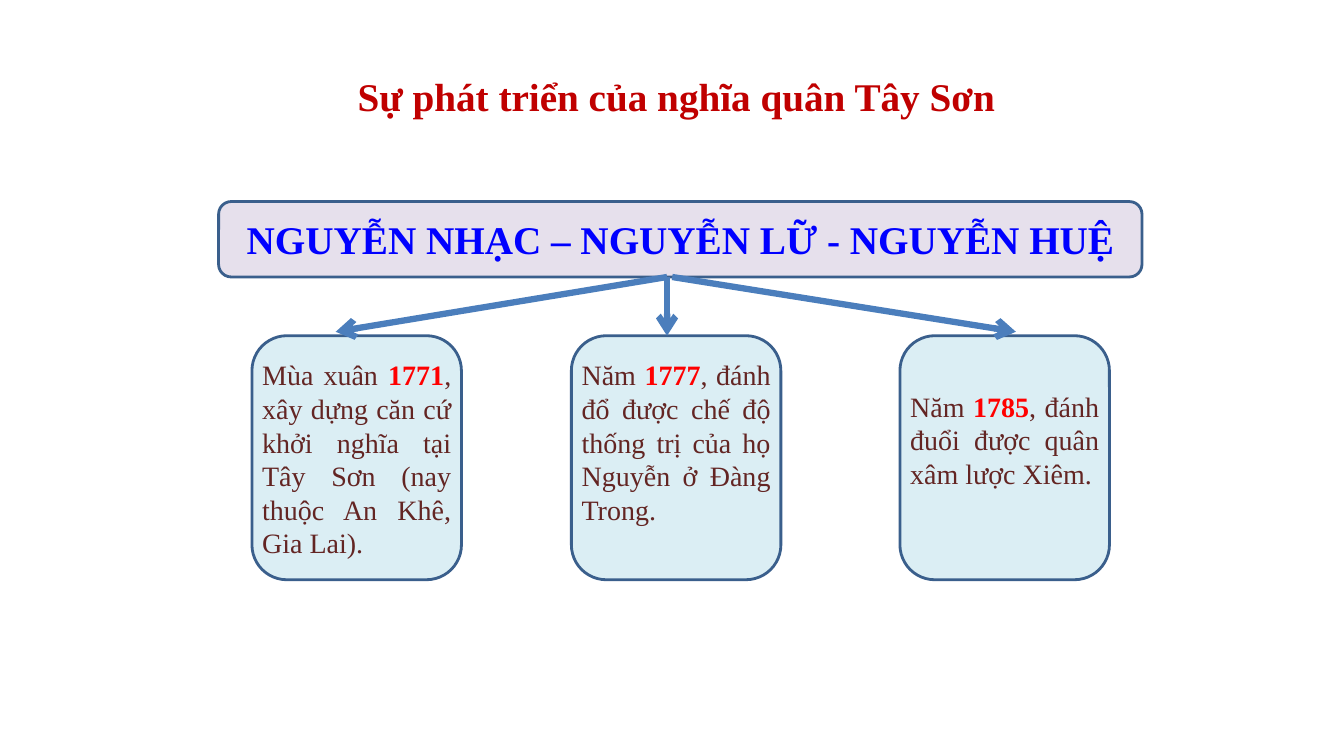
from pptx import Presentation
from pptx.dml.color import RGBColor
from pptx.enum.shapes import MSO_CONNECTOR, MSO_SHAPE
from pptx.enum.text import MSO_ANCHOR, MSO_AUTO_SIZE, PP_ALIGN
from pptx.oxml.ns import qn
from pptx.util import Cm, Pt
from lxml import etree

STRAIGHT = MSO_CONNECTOR.STRAIGHT
ROUNDED = MSO_SHAPE.ROUNDED_RECTANGLE
TOP, MIDDLE = MSO_ANCHOR.TOP, MSO_ANCHOR.MIDDLE
CENTER, JUSTIFY = PP_ALIGN.CENTER, PP_ALIGN.JUSTIFY
NO_AUTOFIT = MSO_AUTO_SIZE.NONE

DARK_RED = RGBColor(0xC0, 0x00, 0x00)
RED = RGBColor(0xFF, 0x00, 0x00)
BROWN = RGBColor(0x63, 0x25, 0x23)
BLUE = RGBColor(0x00, 0x00, 0xFF)
BORDER = RGBColor(0x3A, 0x5F, 0x8C)
ARROW = RGBColor(0x4B, 0x7E, 0xBC)
LILAC = RGBColor(0xE6, 0xE0, 0xEC)
PALE_BLUE = RGBColor(0xDB, 0xEE, 0xF4)


def add_text(p, text, size=20, color=BROWN, bold=False, font="Times New Roman"):
    r = p.add_run()
    r.text = text
    r.font.name = font
    r.font.size = Pt(size)
    r.font.bold = bold
    r.font.color.rgb = color


class Diagram:
    """Adds styled elements to one slide."""

    def __init__(self, slide):
        self.slide = slide

    def title(self, text, left, top, width, height):
        sp = self.slide.shapes.title
        sp.left, sp.top, sp.width, sp.height = Cm(left), Cm(top), Cm(width), Cm(height)
        tf = sp.text_frame
        tf.auto_size = NO_AUTOFIT
        tf.vertical_anchor = MIDDLE
        p = tf.paragraphs[0]
        p.alignment = CENTER
        add_text(p, text, size=28, color=DARK_RED, bold=True)

    def box(self, left, top, width, height, fill, align, anchor=MIDDLE, inset=0):
        """Draw a rounded box and return its empty paragraph."""
        sp = self.slide.shapes.add_shape(ROUNDED, Cm(left), Cm(top), Cm(width), Cm(height))
        sp.shadow.inherit = False
        sp.fill.solid()
        sp.fill.fore_color.rgb = fill
        sp.line.color.rgb = BORDER
        sp.line.width = Pt(2)
        tf = sp.text_frame
        tf.word_wrap = True
        tf.vertical_anchor = anchor
        tf.margin_left = tf.margin_right = tf.margin_bottom = 0
        tf.margin_top = Cm(inset)
        p = tf.paragraphs[0]
        p.alignment = align
        return p

    def arrow(self, x1, y1, x2, y2):
        cxn = self.slide.shapes.add_connector(STRAIGHT, Cm(x1), Cm(y1), Cm(x2), Cm(y2))
        cxn.line.color.rgb = ARROW
        cxn.line.width = Pt(4.5)
        etree.SubElement(cxn.line._get_or_add_ln(), qn("a:tailEnd"), type="arrow")
        etree.SubElement(cxn._element.spPr, qn("a:effectLst"))


def main():
    prs = Presentation()
    prs.slide_width, prs.slide_height = Cm(33.87), Cm(19.05)
    diagram = Diagram(prs.slides.add_slide(prs.slide_layouts[5]))

    diagram.title("Sự phát triển của nghĩa quân Tây Sơn", 4.34, 1.7, 25.4, 1.45)

    p = diagram.box(5.51, 5.08, 23.27, 1.9, LILAC, CENTER)
    add_text(p, "NGUYỄN NHẠC – NGUYỄN LỮ - NGUYỄN HUỆ", size=28, color=BLUE, bold=True)

    # Left edge, top inset, then the words before, in and after the year
    events = [
        (6.35, 0.3, "Mùa xuân ", "1771",
         ", xây dựng căn cứ khởi nghĩa tại Tây Sơn (nay thuộc An Khê, Gia Lai)."),
        (14.4, 0.3, "Năm ", "1777",
         ", đánh đổ được chế độ thống trị của họ Nguyễn ở Đàng Trong."),
        (22.68, 1.09, "Năm ", "1785", ", đánh đuổi được quân xâm lược Xiêm."),
    ]
    for left, inset, before, year, after in events:
        p = diagram.box(left, 8.46, 5.28, 6.15, PALE_BLUE, JUSTIFY, TOP, inset)
        add_text(p, before)
        add_text(p, year, color=RED, bold=True)
        add_text(p, after)

    for x1, x2, y2 in [(16.81, 8.46, 8.36), (16.81, 16.81, 8.46), (16.94, 25.6, 8.36)]:
        diagram.arrow(x1, 6.98, x2, y2)

    prs.save("out.pptx")


if __name__ == "__main__":
    main()
